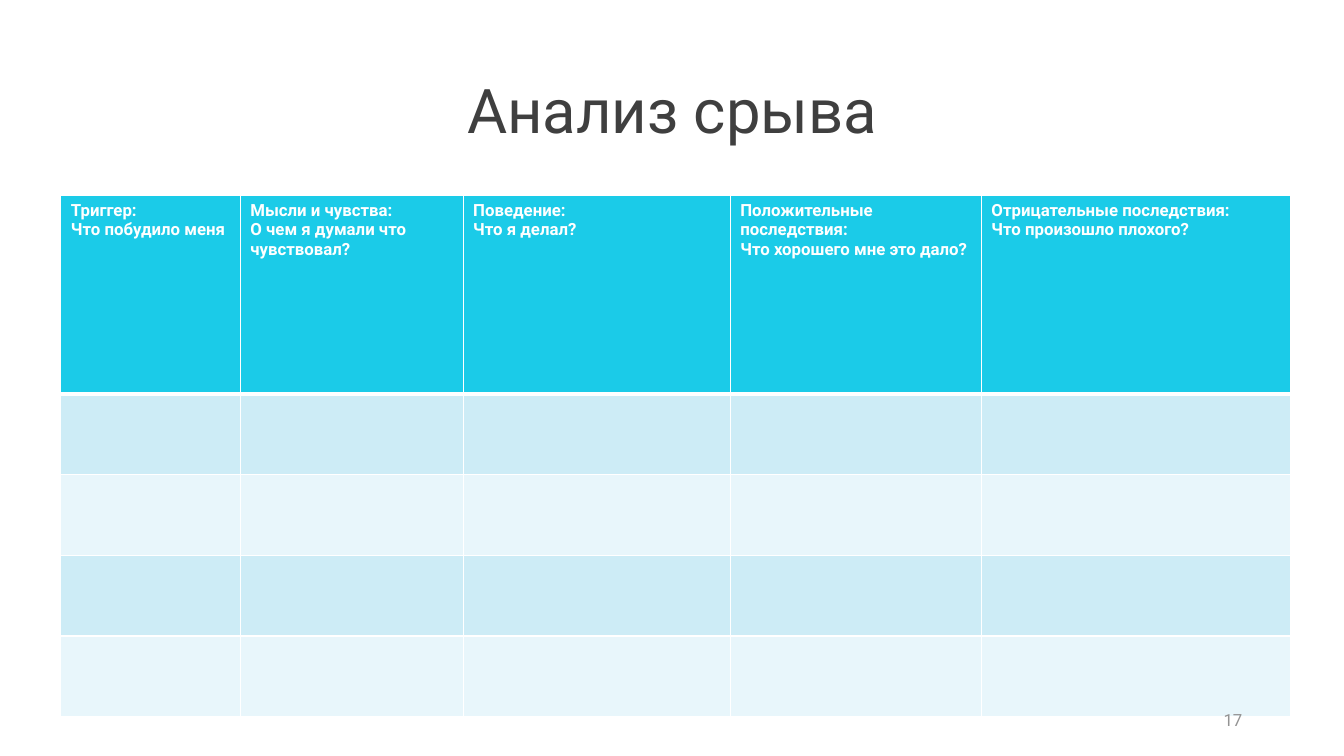
from dataclasses import dataclass

from lxml.etree import SubElement
from pptx import Presentation
from pptx.dml.color import RGBColor as Rgb
from pptx.enum.text import MSO_ANCHOR as Anchor, PP_ALIGN as Align
from pptx.oxml.ns import qn
from pptx.util import Inches, Pt

SLIDE_W, SLIDE_H = Inches(13.33), Inches(7.5)


@dataclass(frozen=True)
class Theme:
    font: str = "Roboto"
    title_size: int = 44
    text_size: int = 12
    title: str = "3F3F3F"
    number: str = "939393"
    white: str = "FFFFFF"
    header: str = "1BCBE8"
    bands: tuple = ("CDECF6", "E8F6FB")
    rule: int = 1
    header_rule: int = 3


THEME = Theme()

# Column widths and row heights, in percent of the slide
COLUMNS = (13.35, 16.58, 19.88, 18.68, 23.03)
HEADER_ROW, ANSWER_ROW, ANSWER_ROWS = 26.27, 10.67, 4

HEADINGS = (
    ("Триггер:", "Что побудило меня"),
    ("Мысли и чувства:", "О чем я думали что чувствовал?"),
    ("Поведение:", "Что я делал?"),
    ("Положительные последствия:", "Что хорошего мне это дало?"),
    ("Отрицательные последствия:", "Что произошло плохого?"),
)


def across(percent):
    return round(SLIDE_W * percent / 100)


def down(percent):
    return round(SLIDE_H * percent / 100)


def area(left, top, width, height):
    return across(left), down(top), across(width), down(height)


def add_run(paragraph, text, size, color, bold=False):
    run = paragraph.add_run()
    run.text = text
    run.font.name = THEME.font
    run.font.size = Pt(size)
    run.font.bold = bold
    run.font.color.rgb = Rgb.from_string(color)


def add_label(slide, place, text, size, color, align):
    frame = slide.shapes.add_textbox(*place).text_frame
    frame.word_wrap = True
    frame.vertical_anchor = Anchor.MIDDLE
    line = frame.paragraphs[0]
    line.alignment = align
    line.line_spacing = 0.9
    add_run(line, text, size, color)


def style_cell(cell, color, top, bottom):
    # Borders come before the fill in the cell properties
    properties = cell._tc.get_or_add_tcPr()
    sides = {"L": THEME.rule, "R": THEME.rule, "T": top, "B": bottom}
    for side, width in sides.items():
        border = SubElement(properties, qn(f"a:ln{side}"), w=str(Pt(width)))
        paint = SubElement(border, qn("a:solidFill"))
        SubElement(paint, qn("a:srgbClr"), val=THEME.white)
    cell.fill.solid()
    cell.fill.fore_color.rgb = Rgb.from_string(color)


def add_heading(cell, lines):
    frame = cell.text_frame
    for index, text in enumerate(lines):
        line = frame.add_paragraph() if index else frame.paragraphs[0]
        add_run(line, text, THEME.text_size, THEME.white, bold=True)


def add_analysis_table(slide, left, top):
    heights = (HEADER_ROW,) + (ANSWER_ROW,) * ANSWER_ROWS
    place = area(left, top, sum(COLUMNS), sum(heights))
    table = slide.shapes.add_table(len(heights), len(COLUMNS), *place).table
    for column, width in zip(table.columns, COLUMNS):
        column.width = across(width)

    for index, (row, height) in enumerate(zip(table.rows, heights)):
        row.height = down(height)
        color = THEME.bands[(index - 1) % 2] if index else THEME.header
        top_rule = THEME.header_rule if index == 1 else THEME.rule
        bottom_rule = THEME.rule if index else THEME.header_rule
        for cell in row.cells:
            style_cell(cell, color, top_rule, bottom_rule)

    for cell, lines in zip(table.rows[0].cells, HEADINGS):
        add_heading(cell, lines)


def main():
    deck = Presentation()
    deck.slide_width, deck.slide_height = SLIDE_W, SLIDE_H
    slide = deck.slides.add_slide(deck.slide_layouts[6])

    # Title
    add_label(slide, area(6.9, 5.33, 86.27, 19.33), "Анализ срыва",
              THEME.title_size, THEME.title, Align.CENTER)
    # Relapse worksheet
    add_analysis_table(slide, 4.53, 25.87)
    # Page number
    add_label(slide, area(70.67, 92.67, 22.51, 5.33), "17",
              THEME.text_size, THEME.number, Align.RIGHT)

    deck.save("out.pptx")


if __name__ == "__main__":
    main()
